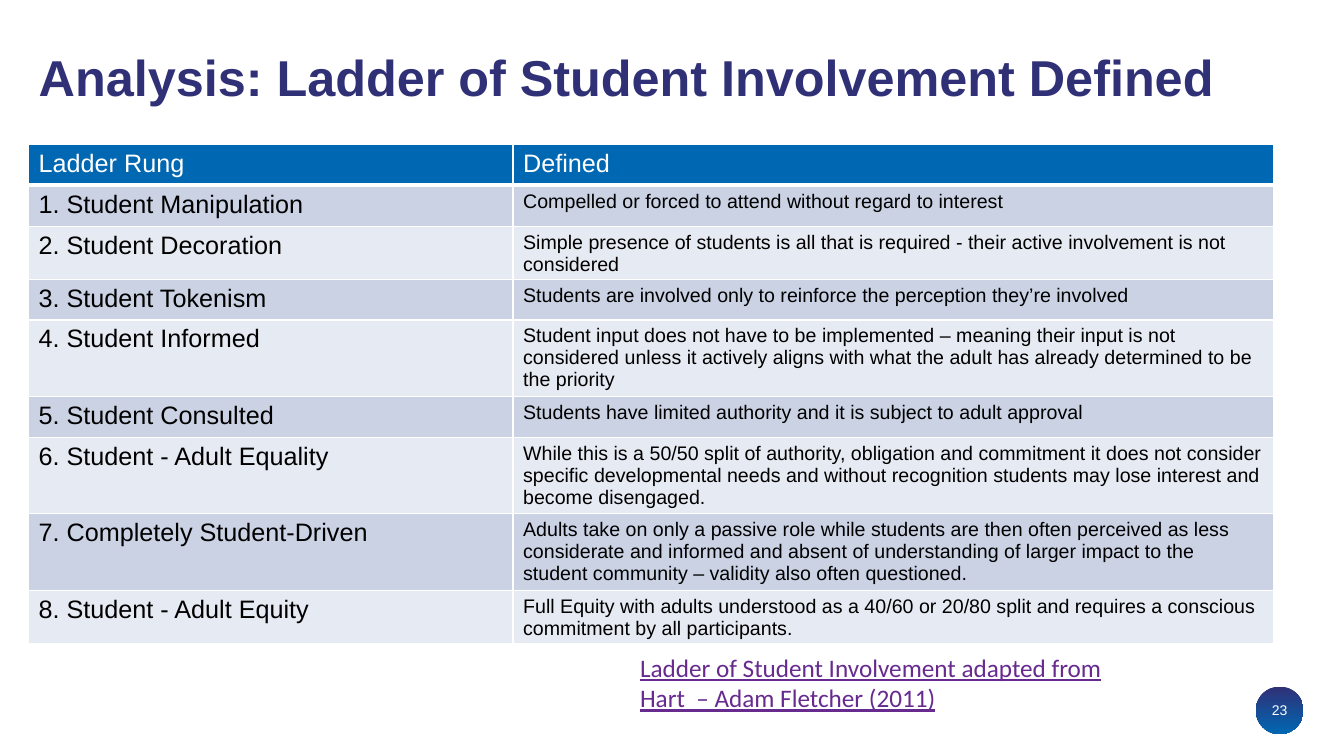
from lxml import etree
from pptx import Presentation
from pptx.dml.color import RGBColor
from pptx.enum.shapes import MSO_SHAPE
from pptx.enum.text import MSO_ANCHOR, MSO_AUTO_SIZE, PP_ALIGN
from pptx.oxml.ns import qn
from pptx.util import Cm, Pt

OVAL = MSO_SHAPE.OVAL
MIDDLE = MSO_ANCHOR.MIDDLE
FIXED = MSO_AUTO_SIZE.NONE
LEFT, CENTER = PP_ALIGN.LEFT, PP_ALIGN.CENTER

NAVY = RGBColor(0x30, 0x30, 0x77)
BLUE = RGBColor(0x00, 0x67, 0xB2)
PURPLE = RGBColor(0x67, 0x2A, 0x8F)
WHITE = RGBColor(0xFF, 0xFF, 0xFF)
BLACK = RGBColor(0x00, 0x00, 0x00)
BANDS = RGBColor(0xCA, 0xD2, 0xE4), RGBColor(0xE6, 0xEA, 0xF2)

TITLE = dict(name="Arial", size=Pt(36), bold=True)
HEAD = dict(name="Arial", size=Pt(18), bold=False)
RUNG = HEAD
DEFINED = dict(name="Arial", size=Pt(14), bold=False)
CREDIT = dict(name="Calibri", size=Pt(18), underline=True)
NUMBER = dict(name="Arial", size=Pt(10))

ROWS = [
    ("Ladder Rung", "Defined"),
    ("1. Student Manipulation",
     "Compelled or forced to attend without regard to interest"),
    ("2. Student Decoration",
     "Simple presence of students is all that is required - their active "
     "involvement is not considered"),
    ("3. Student Tokenism",
     "Students are involved only to reinforce the perception they’re involved"),
    ("4. Student Informed",
     "Student input does not have to be implemented – meaning their input is "
     "not considered unless it actively aligns with what the adult has already "
     "determined to be the priority"),
    ("5. Student Consulted",
     "Students have limited authority and it is subject to adult approval"),
    ("6. Student - Adult Equality",
     "While this is a 50/50 split of authority, obligation and commitment it "
     "does not consider specific developmental needs and without recognition "
     "students may lose interest and become disengaged."),
    ("7. Completely Student-Driven",
     "Adults take on only a passive role while students are then often "
     "perceived as less considerate and informed and absent of understanding "
     "of larger impact to the student community – validity also often "
     "questioned."),
    ("8. Student - Adult Equity",
     "Full Equity with adults understood as a 40/60 or 20/80 split and requires "
     "a conscious commitment by all participants."),
]


def write(frame, text, style, color, align=LEFT):
    frame.word_wrap = True
    para = frame.paragraphs[0]
    para.alignment = align
    run = para.add_run()
    run.text = text
    for key, value in style.items():
        setattr(run.font, key, value)
    run.font.color.rgb = color
    return para


def edge(side, width):
    line = etree.Element(qn("a:" + side), w=str(Pt(width)))
    fill = etree.SubElement(line, qn("a:solidFill"))
    etree.SubElement(fill, qn("a:srgbClr"), val=str(WHITE))
    return line


def add_title(slide, x, y, w, h):
    title = slide.shapes.title
    title.left, title.top, title.width, title.height = x, y, w, h
    frame = title.text_frame
    frame.auto_size = FIXED
    frame.vertical_anchor = MIDDLE
    para = write(frame, "Analysis: Ladder of Student Involvement Defined",
                 TITLE, NAVY)
    para.line_spacing = 0.9


def add_ladder(slide, x, y, w, h):
    table = slide.shapes.add_table(len(ROWS), 2, x, y, w, h).table
    first = Cm(12.21)
    table.columns[0].width = first
    table.columns[1].width = w - first
    for r, texts in enumerate(ROWS):
        for c, text in enumerate(texts):
            cell = table.cell(r, c)
            if r == 0:
                style, color, back = HEAD, WHITE, BLUE
            else:
                style = (RUNG, DEFINED)[c]
                color, back = BLACK, BANDS[(r - 1) % 2]
            write(cell.text_frame, text, style, color)
            # Tight foot keeps the wrapped rows low
            if style is DEFINED:
                cell.margin_bottom = Cm(0.02)
            cell.fill.solid()
            cell.fill.fore_color.rgb = back
            # White grid, thicker below the header
            widths = dict(lnL=1, lnR=1, lnT=3 if r == 1 else 1,
                          lnB=3 if r == 0 else 1)
            props = cell._tc.get_or_add_tcPr()
            for spot, (side, width) in enumerate(widths.items()):
                props.insert(spot, edge(side, width))


def add_credit(slide, x, y, w, h):
    box = slide.shapes.add_textbox(x, y, w, h)
    write(box.text_frame,
          "Ladder of Student Involvement adapted from "
          "Hart  – Adam Fletcher (2011)", CREDIT, PURPLE)


def add_number(slide, x, y, size):
    # Round badge
    badge = slide.shapes.add_shape(OVAL, x, y, size, size)
    badge.shadow.inherit = False
    badge.line.fill.background()
    badge.fill.gradient()
    badge.fill.gradient_angle = 270
    for stop, color, spot in zip(badge.fill.gradient_stops, (NAVY, BLUE), (0, 1)):
        stop.color.rgb = color
        stop.position = spot
    # Page number over the badge
    wide = Cm(1.75)
    box = slide.shapes.add_textbox(x + (size - wide) // 2, y + Cm(0.25),
                                   wide, Cm(1.12))
    write(box.text_frame, "23", NUMBER, WHITE, CENTER)


def main():
    deck = Presentation()
    deck.slide_width, deck.slide_height = Cm(33.87), Cm(19.05)
    slide = deck.slides.add_slide(deck.slide_layouts[5])
    left = Cm(0.72)
    add_number(slide, Cm(31.65), Cm(17.3), Cm(1.2))
    add_title(slide, left, Cm(1.02), Cm(32.13), Cm(2))
    add_ladder(slide, left, Cm(3.64), Cm(31.37), Cm(1.03) * len(ROWS))
    add_credit(slide, Cm(15.88), Cm(16.31), Cm(13.1), Cm(1.8))
    deck.save("out.pptx")


if __name__ == "__main__":
    main()
